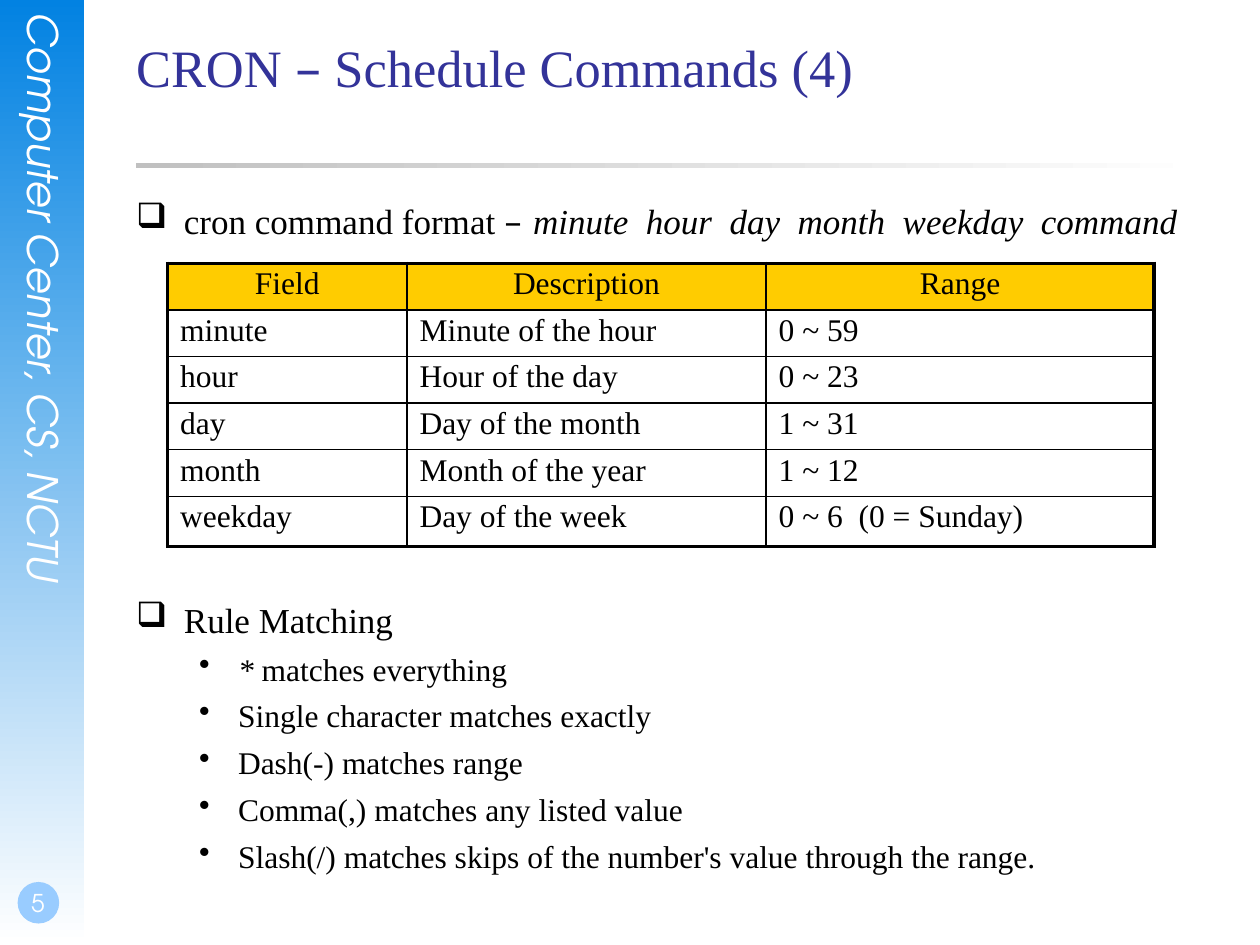
import lxml.etree
import pptx
import pptx.dml.color
import pptx.enum.shapes
import pptx.enum.text
import pptx.oxml.ns
import pptx.util

Inches = pptx.util.Inches
Pt = pptx.util.Pt
qn = pptx.oxml.ns.qn
ALIGN = pptx.enum.text.PP_ALIGN
ANCHOR = pptx.enum.text.MSO_ANCHOR
SHAPE = pptx.enum.shapes.MSO_SHAPE

SERIF = "Times New Roman"
DASH_FONT = "DejaVu Sans"
SIDEBAR_FONT = "TeX Gyre Adventor"
BLACK, WHITE = "000000", "FFFFFF"

FIELDS = [
    ("Field", "Description", "Range"),
    ("minute", "Minute of the hour", "0 ~ 59"),
    ("hour", "Hour of the day", "0 ~ 23"),
    ("day", "Day of the month", "1 ~ 31"),
    ("month", "Month of the year", "1 ~ 12"),
    ("weekday", "Day of the week", "0 ~ 6  (0 = Sunday)"),
]
COLUMN_WIDTHS = [1.9, 2.85, 3.08]
ROW_HEIGHTS = [0.37] * 5 + [0.4]
RULES = [
    "Single character matches exactly",
    "Dash(-) matches range",
    "Comma(,) matches any listed value",
    "Slash(/) matches skips of the number's value through the range.",
]


def rgb(color):
    return pptx.dml.color.RGBColor.from_string(color)


def add_span(para, text, size=18, color=BLACK, font=SERIF, italic=False):
    span = para.add_run()
    span.text = text
    span.font.size = Pt(size)
    span.font.name = font
    span.font.italic = italic
    span.font.color.rgb = rgb(color)


def set_frame(frame, insets=(0, 0, 0, 0), anchor=ANCHOR.TOP):
    frame.word_wrap = True
    frame.auto_size = pptx.enum.text.MSO_AUTO_SIZE.NONE
    frame.vertical_anchor = anchor
    (frame.margin_left, frame.margin_top,
     frame.margin_right, frame.margin_bottom) = map(Inches, insets)


def add_box(slide, left, top, width, height, **layout):
    box = slide.shapes.add_textbox(*map(Inches, (left, top, width, height)))
    set_frame(box.text_frame, **layout)
    return box.text_frame


def add_panel(slide, kind, left, top, width, height, colors, angle=0):
    """Draw a borderless shape; two colors make a gradient."""
    panel = slide.shapes.add_shape(kind, *map(Inches, (left, top, width, height)))
    panel.shadow.inherit = False
    panel.line.fill.background()
    if len(colors) == 1:
        panel.fill.solid()
        panel.fill.fore_color.rgb = rgb(colors[0])
        return
    panel.fill.gradient()
    panel.fill.gradient_angle = angle
    for stop, color in zip(panel.fill.gradient_stops, colors):
        stop.color.rgb = rgb(color)


def format_bullet(para, symbol, indent, hanging, size, level=0):
    para.level = level
    para.space_before = Pt(round(size * 0.29, 1))  # a quarter of a line
    properties = para._p.get_or_add_pPr()
    properties.set("marL", str(Inches(indent)))
    properties.set("indent", str(-Inches(hanging)))
    lxml.etree.SubElement(properties, qn("a:buChar"), char=symbol)


def format_heading(para):
    format_bullet(para, "❑", 0.38, 0.38, 20)


def set_border(cell, side, width):
    line = lxml.etree.SubElement(cell._tc.get_or_add_tcPr(), qn("a:ln" + side),
                                 w=str(Pt(width)))
    fill = lxml.etree.SubElement(line, qn("a:solidFill"))
    lxml.etree.SubElement(fill, qn("a:srgbClr"), val=BLACK)


def add_sidebar(slide):
    add_panel(slide, SHAPE.RECTANGLE, 0, 0, 0.67, 7.5, ["0282E2", WHITE], angle=270)
    name = add_box(slide, 0.15, 0.1, 0.4, 5.11)
    name._txBody.bodyPr.set("vert", "eaVert")
    add_span(name.paragraphs[0], "Computer Center, CS, NCTU", size=24,
             color=WHITE, font=SIDEBAR_FONT, italic=True)

    add_panel(slide, SHAPE.OVAL, 0.14, 7, 0.33, 0.33, ["99CCFF"])
    number = add_box(slide, 0, 6.83, 0.58, 0.5,
                     insets=(0.02, 0, 0, 0.05), anchor=ANCHOR.BOTTOM)
    number.paragraphs[0].alignment = ALIGN.CENTER
    add_span(number.paragraphs[0], "5", size=14, color=WHITE, font=SIDEBAR_FONT)


def add_title(slide):
    add_panel(slide, SHAPE.RECTANGLE, 1.08, 1.29, 8.5, 0.04, ["C0C0C0", WHITE])
    title = slide.shapes.title
    title.left, title.top, title.width, title.height = map(
        Inches, (1.08, 0.28, 8.5, 1.25))
    set_frame(title.text_frame)
    para = title.text_frame.paragraphs[0]
    para.alignment = ALIGN.LEFT
    for text, font in [("CRON ", SERIF), ("–", DASH_FONT),
                       (" Schedule Commands (4)", SERIF)]:
        add_span(para, text, size=30, color="333399", font=font)


def add_command_format(slide):
    para = add_box(slide, 1.08, 1.58, 8.58, 0.45).paragraphs[0]
    format_heading(para)
    add_span(para, "cron command format ", size=20)
    add_span(para, "– ", size=20, font=DASH_FONT)
    add_span(para, "minute  hour  day  month  weekday  command", size=20, italic=True)


def add_field_table(slide):
    last_row, last_column = len(FIELDS) - 1, len(COLUMN_WIDTHS) - 1
    table = slide.shapes.add_table(
        len(FIELDS), len(COLUMN_WIDTHS), Inches(1.33), Inches(2.09),
        Inches(sum(COLUMN_WIDTHS)), Inches(sum(ROW_HEIGHTS))).table
    table.first_row = table.horz_banding = False
    for column, width in zip(table.columns, COLUMN_WIDTHS):
        column.width = Inches(width)
    for row, height in zip(table.rows, ROW_HEIGHTS):
        row.height = Inches(height)

    for r, texts in enumerate(FIELDS):
        for c, text in enumerate(texts):
            cell = table.cell(r, c)
            para = cell.text_frame.paragraphs[0]
            para.line_spacing = 0.9
            add_span(para, text)
            outer = {"L": c == 0, "R": c == last_column,
                     "T": r == 0, "B": r == last_row}
            for side, is_outer in outer.items():
                set_border(cell, side, 2.25 if is_outer else 1)
            if r == 0:
                para.alignment = ALIGN.CENTER
                cell.fill.solid()
                cell.fill.fore_color.rgb = rgb("FFCC00")
            else:
                cell.fill.background()


def add_matching_rules(slide):
    frame = add_box(slide, 1.08, 4.75, 7.83, 2.17)
    heading = frame.paragraphs[0]
    format_heading(heading)
    add_span(heading, "Rule Matching", size=20)
    for rule in ["matches everything"] + RULES:
        para = frame.add_paragraph()
        format_bullet(para, "•", 0.81, 0.31, 18, level=1)
        if rule == "matches everything":
            add_span(para, "* ", italic=True)
        add_span(para, rule)


def main():
    deck = pptx.Presentation()
    deck.slide_width, deck.slide_height = Inches(10), Inches(7.5)
    slide = deck.slides.add_slide(deck.slide_layouts.get_by_name("Title Only"))
    add_sidebar(slide)
    add_title(slide)
    add_command_format(slide)
    add_field_table(slide)
    add_matching_rules(slide)
    deck.save("out.pptx")


if __name__ == "__main__":
    main()
